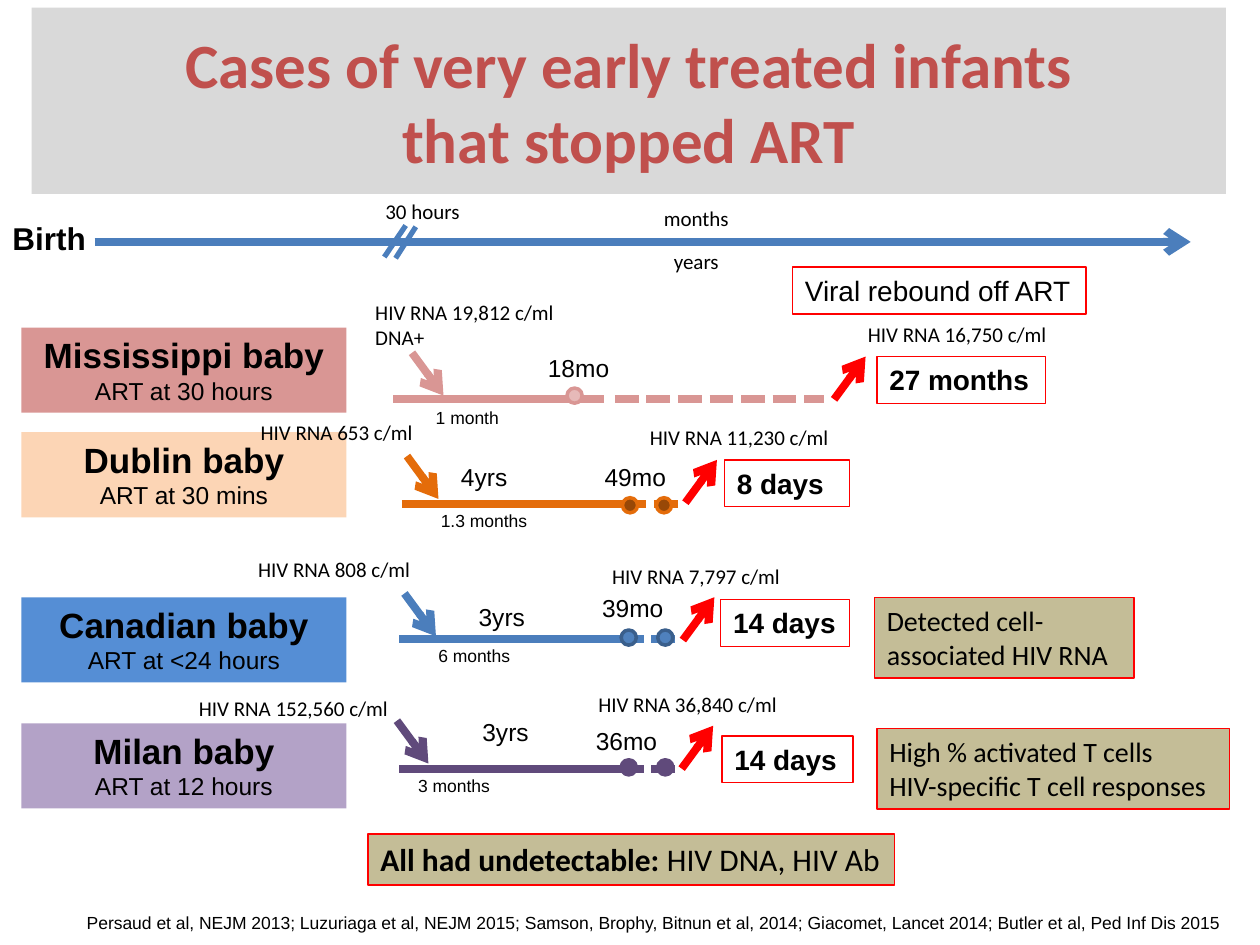
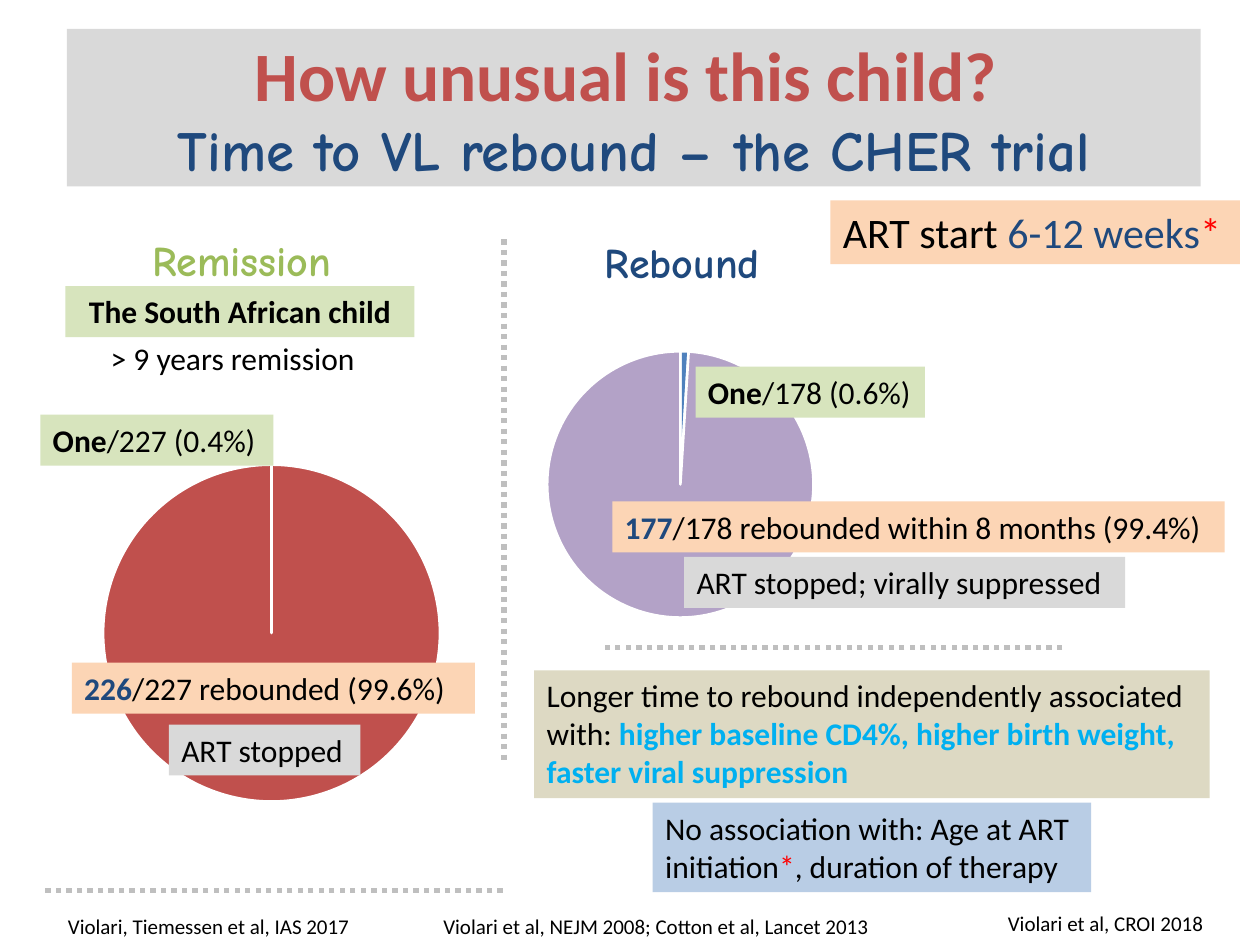
"""Build two slides on HIV rebound in early treated infants."""
from dataclasses import dataclass

from lxml.etree import SubElement
from pptx import Presentation
from pptx.chart.data import CategoryChartData
from pptx.dml.color import RGBColor
from pptx.enum.chart import XL_CHART_TYPE as ChartType
from pptx.enum.dml import MSO_LINE as Dash
from pptx.enum.shapes import MSO_CONNECTOR as Connector, MSO_SHAPE as Shape
from pptx.enum.text import MSO_ANCHOR as Anchor, MSO_AUTO_SIZE as AutoSize, PP_ALIGN as Align
from pptx.oxml.ns import qn
from pptx.util import Inches, Pt


@dataclass(frozen=True)
class Theme:
    """Colours, fonts and type sizes of both slides."""
    black: str = "000000"
    white: str = "FFFFFF"
    red: str = "FF0000"
    brick: str = "C0504D"
    grey: str = "D9D9D9"
    dots: str = "BFBFBF"
    navy: str = "1F497D"
    blue: str = "4B7EBC"
    sliver: str = "4F81BD"
    rim: str = "3A5F8C"
    sky: str = "558ED5"
    pale_blue: str = "B9CDE5"
    cyan: str = "00B0F0"
    rose: str = "D99694"
    pale_rose: str = "E6B9B8"
    peach: str = "FCD5B5"
    orange: str = "E46C0A"
    brown: str = "984807"
    lilac: str = "B3A2C7"
    purple: str = "604A7B"
    tan: str = "C4BD97"
    pale_tan: str = "DDD9C3"
    green: str = "9BBB59"
    pale_green: str = "D7E4BD"
    sans: str = "Arial"
    body: str = "Calibri"
    comic: str = "Comic Neue"
    tiny: float = 10
    small: float = 12
    label: float = 14
    medium: float = 16
    large: float = 18
    name: float = 20
    heading: float = 24
    title: float = 36
    question: float = 39.6
    subtitle: float = 32.4


T = Theme()
BOLD = {"bold": True}
NAVY_BOLD = {"bold": True, "color": T.navy}
STAR = ("*", {"color": T.red})

CASES_TITLE = [("Cases of very early treated infants\nthat stopped ART", {})]
CASES = [
    dict(name="Mississippi baby", art="ART at 30 hours", top=2.6, box=T.rose,
         line=T.rose, dot=T.pale_rose, rim=T.rose, y=3.17, solid=(3.12, 4.79), dashed=(4.88, 6.54),
         dots=[4.5], dot_top=3.08, start=(3.27, 2.8), rebound=(6.62, 3.17),
         rna=[("HIV RNA 19,812 c/ml\nDNA+", 2.88, 2.33, 1.67), ("HIV RNA 16,750 c/ml", 6.79, 2.5, 1.67)],
         ages=[("18mo", 4.25, 2.75, 0.8)], suppressed=("1 month", 3.36, 3.18, 0.75),
         result=("27 months", 6.96, 2.83, 1.34)),
    dict(name="Dublin baby", art="ART at 30 mins", top=3.43, box=T.peach,
         line=T.orange, dot=T.brown, rim=T.orange, y=4, solid=(3.19, 5.09), dashed=(4.94, 5.44),
         dots=[4.94, 5.21], dot_top=3.95, start=(3.23, 3.62), rebound=(5.44, 3.99),
         rna=[("HIV RNA 653 c/ml", 1.97, 3.28, 1.5), ("HIV RNA 11,230 c/ml", 5.06, 3.32, 1.67)],
         ages=[("4yrs", 3.56, 3.62, 0.95), ("49mo", 4.7, 3.62, 0.72)],
         suppressed=("1.3 months", 3.4, 4, 0.92), result=("8 days", 5.75, 3.65, 0.99)),
    dict(name="Canadian baby", art="ART at <24 hours", top=4.74, box=T.sky,
         line=T.blue, dot=T.sliver, rim=T.rim, y=5.07, solid=(3.17, 5.07), dashed=(4.92, 5.42),
         dots=[4.93, 5.22], dot_top=5, start=(3.21, 4.71), rebound=(5.42, 5.08),
         rna=[("HIV RNA 808 c/ml", 1.95, 4.37, 1.5), ("HIV RNA 7,797 c/ml", 4.76, 4.42, 1.67)],
         ages=[("3yrs", 3.7, 4.73, 0.95), ("39mo", 4.68, 4.66, 0.74)],
         suppressed=("6 months", 3.38, 5.07, 0.92), result=("14 days", 5.72, 4.76, 1.02)),
    dict(name="Milan baby", art="ART at 12 hours", top=5.74, box=T.lilac,
         line=T.purple, dot=T.purple, rim=T.purple, y=6.1, solid=(3.17, 5.07), dashed=(4.92, 5.42),
         dots=[4.93, 5.22], dot_top=6.03, start=(3.15, 5.72), rebound=(5.41, 6.1),
         rna=[("HIV RNA 152,560 c/ml", 1.48, 5.47, 1.83), ("HIV RNA 36,840 c/ml", 4.65, 5.44, 1.67)],
         ages=[("3yrs", 3.73, 5.64, 0.95), ("36mo", 4.63, 5.71, 0.72)],
         suppressed=("3 months", 3.22, 6.1, 0.92), result=("14 days", 5.73, 5.84, 1.04)),
]
AXIS_LABELS = [("30 hours", 2.96, 1.53, 0.95), ("months", 5.17, 1.58, 0.83), ("years", 5.25, 1.92, 0.83)]
AXIS_BREAK = [((3.05, 2.04), (3.22, 1.79)), ((3.14, 2.05), (3.3, 1.8))]
FINDINGS = [
    ([[("Detected cell-associated HIV RNA", {})]], 6.94, 4.74, 2.06, T.medium),
    ([[("High % activated T cells", {})], [("HIV-specific T cell responses", {})]], 6.96, 5.78, 2.8, T.medium),
    ([[("All had undetectable: ", BOLD), ("HIV DNA, HIV Ab", {})]], 2.92, 6.62, 4.18, T.large),
]
SOURCES = ("Persaud et al, NEJM 2013; Luzuriaga et al, NEJM 2015; Samson, Brophy, Bitnun et al, 2014; "
           "Giacomet, Lancet 2014; Butler et al, Ped Inf Dis 2015")

CHER_TITLE = [("How unusual is this child? \n", {}),
              ("Time to VL rebound – the CHER trial",
               {"size": T.subtitle, "font": T.comic, "color": T.navy})]
HEADINGS = [("Remission", 1.11, 1.81, 1.85, T.green), ("Rebound", 4.7, 1.83, 1.67, T.navy)]
ART_START = [("ART start ", {}), ("6-12 weeks", {"color": T.navy}), STAR]
ASSOCIATIONS = [
    ([("Longer time to rebound independently associated with: ", {}),
      ("higher baseline CD4%, higher birth weight, faster viral suppression", {"bold": True, "color": T.cyan})],
     4.24, 5.32, 5.36, T.pale_tan, 3),
    ([("No association with: Age at ART initiation", {}), STAR, (", duration of therapy", {})],
     5.18, 6.37, 3.48, T.pale_blue, 2),
]
PIES = [((0, 100), T.brick, (-0.06, 3.55, 4.43, 2.95)), ((1, 99), T.lilac, (3.61, 2.65, 3.58, 2.39))]
PIE_LABELS = [
    ([("226", NAVY_BOLD), ("/227 rebounded (99.6%)", {})], 0.57, 5.26, 3.2, T.peach),
    ([("177", NAVY_BOLD), ("/178 rebounded within 8 months (99.4%)", {})], 4.86, 3.98, 4.86, T.peach),
    ([("ART stopped", {})], 1.34, 5.75, 1.52, T.grey),
    ([("ART stopped; virally suppressed", {})], 5.43, 4.42, 3.5, T.grey),
    ([("One", BOLD), ("/227 (0.4%)", {})], 0.32, 3.29, 1.85, T.pale_green),
    ([("One", BOLD), ("/178 (0.6%)", {})], 5.52, 2.91, 1.82, T.pale_green),
]
DIVIDERS = [((4, 1.9), (4, 6.04)), ((3.99, 7.07), (0.36, 7.07)), ((8.43, 5.14), (4.77, 5.14))]
CITATIONS = [("Violari, Tiemessen et al, IAS 2017", 0.44, 7.2, 2.52),
             ("Violari et al, NEJM 2008; Cotton et al, Lancet 2013", 3.42, 7.2, 3.66),
             ("Violari et al, CROI 2018", 7.9, 7.18, 1.82)]


def paint(fill, color):
    fill.solid()
    fill.fore_color.rgb = RGBColor.from_string(color)


def set_font(font, size=None, font_name=None, color=None, bold=None):
    if size:
        font.size = Pt(size)
    if font_name:
        font.name = font_name
    if color:
        paint(font.fill, color)
    if bold is not None:
        font.bold = bold


def style(font, values):
    set_font(font, values.get("size"), values.get("font"), values.get("color"), values.get("bold"))


def write(frame, paragraphs, base, align):
    """Fill a frame; styles of a lone run go to its paragraph."""
    for index, runs in enumerate(paragraphs):
        paragraph = frame.paragraphs[0] if index == 0 else frame.add_paragraph()
        paragraph.alignment = align
        alone = len(runs) == 1
        style(paragraph.font, {**base, **runs[0][1]} if alone else base)
        for text, own in runs:
            for number, piece in enumerate(text.split("\n")):
                if number:
                    paragraph.add_line_break()
                if piece:
                    run = paragraph.add_run()
                    run.text = piece
                    if not alone:
                        style(run.font, own)


def add_text(slide, content, left, top, width, size, font=T.body, color=T.black, bold=False,
             fill=None, border=None, align=Align.LEFT, lines=None):
    """Place text in a box whose height follows from its lines."""
    paragraphs = [[(line, {})] for line in content.split("\n")] if isinstance(content, str) else content
    sizes = [runs[0][1].get("size", size) for runs in paragraphs]
    height = (lines * size if lines else sum(sizes)) * 1.22 / 72 + 0.1
    box = slide.shapes.add_textbox(Inches(left), Inches(top), Inches(width), Inches(height))
    box.text_frame.word_wrap = True
    if fill:
        paint(box.fill, fill)
    if border:
        paint(box.line.fill, border)
        box.line.width = Pt(0.75)
    write(box.text_frame, paragraphs, dict(size=size, font=font, color=color, bold=bold), align)


def add_line(slide, start, end, color, width=4.5, dash=None, arrow=False):
    line = slide.shapes.add_connector(Connector.STRAIGHT, *map(Inches, (*start, *end)))
    paint(line.line.fill, color)
    line.line.width = Pt(width)
    if dash:
        line.line.dash_style = dash
    if arrow:
        SubElement(line.get_or_add_ln(), qn("a:tailEnd"), type="arrow")
    SubElement(line._element.spPr, qn("a:effectLst"))


def add_titled_slide(deck, runs, place, size):
    slide = deck.slides.add_slide(deck.slide_layouts[5])
    title = slide.shapes.title
    title.left, title.top, title.width, title.height = map(Inches, place)
    paint(title.fill, T.grey)
    title.text_frame.vertical_anchor = Anchor.MIDDLE
    title.text_frame.auto_size = AutoSize.NONE
    write(title.text_frame, [runs], dict(size=size, font=T.body, color=T.brick, bold=True), Align.CENTER)
    return slide


def add_case(slide, case):
    """Draw one baby's box, treatment line, rebound and labels."""
    y, color = case["y"], case["line"]
    add_text(slide, [[(case["name"], BOLD)], [(case["art"], {"size": T.label})]], 0.17, case["top"], 2.58,
             T.name, T.sans, fill=case["box"], align=Align.CENTER)
    for (left, right), dash in ((case["solid"], None), (case["dashed"], Dash.SQUARE_DOT)):
        add_line(slide, (left, y), (right, y), color, dash=dash)
    for left in case["dots"]:
        dot = slide.shapes.add_shape(Shape.FLOWCHART_CONNECTOR, Inches(left), Inches(case["dot_top"]),
                                     Inches(0.12), Inches(0.12))
        dot.shadow.inherit = False
        paint(dot.fill, case["dot"])
        paint(dot.line.fill, case["rim"])
        dot.line.width = Pt(2)
    for (x, top), rise, arrow_color in ((case["start"], 0.34, color), (case["rebound"], -0.34, T.red)):
        add_line(slide, (x, top), (x + 0.25, top + rise), arrow_color, arrow=True)
    for rna in case["rna"]:
        add_text(slide, *rna, T.small)
    for age in case["ages"]:
        add_text(slide, *age, T.label, T.sans)
    add_text(slide, *case["suppressed"], T.tiny, T.sans)
    add_text(slide, *case["result"], T.medium, T.sans, bold=True, border=T.red)


def add_pie(slide, values, color, place):
    data = CategoryChartData()
    data.categories = ["1", "2"]
    data.add_series("Series 1", values)
    chart = slide.shapes.add_chart(ChartType.PIE, *map(Inches, place), data).chart
    chart.has_legend = chart.has_title = False
    set_font(chart.font, T.tiny, T.body, T.black)
    plot = chart.plots[0]
    plot.vary_by_categories = True
    for index, slice_color in enumerate((T.sliver, color)):
        slice_format = plot.series[0].points[index].format
        paint(slice_format.fill, slice_color)
        paint(slice_format.line.fill, T.white)
        slice_format.line.width = Pt(1.5)


def build_cases(deck):
    slide = add_titled_slide(deck, CASES_TITLE, (0.25, 0.06, 9.48, 1.48), T.title)
    add_line(slide, (0.75, 1.92), (9.45, 1.92), T.blue, arrow=True)
    add_text(slide, "Birth", 0, 1.69, 2.33, T.large, T.sans, bold=True)
    for start, end in AXIS_BREAK:
        add_line(slide, start, end, T.blue, 3)
    for label in AXIS_LABELS:
        add_text(slide, *label, T.small)
    for case in reversed(CASES):
        add_case(slide, case)
    for index, finding in enumerate(FINDINGS):
        add_text(slide, *finding, fill=T.tan, border=T.red, lines=2 if index == 0 else None)
    add_text(slide, "Viral rebound off ART", 6.29, 2.12, 2.33, T.medium, T.sans, border=T.red)
    add_text(slide, SOURCES, 0.59, 7.19, 9.24, T.tiny, T.sans)


def build_cher(deck):
    slide = add_titled_slide(deck, CHER_TITLE, (0.53, 0.23, 9, 1.25), T.question)
    for text, left, top, width, color in HEADINGS:
        add_text(slide, text, left, top, width, T.heading, T.comic, color, True)
    add_text(slide, "The South African child", 0.52, 2.27, 2.77, T.large, bold=True,
             fill=T.pale_green, align=Align.CENTER)
    add_text(slide, [ART_START], 6.59, 1.59, 3.25, T.heading, fill=T.peach)
    add_text(slide, "> 9 years remission", 0.78, 2.64, 2.28, T.large)
    for citation in CITATIONS:
        add_text(slide, *citation, T.small)
    for runs, left, top, width, fill, lines in ASSOCIATIONS:
        add_text(slide, [runs], left, top, width, T.large, fill=fill, lines=lines)
    for start, end in DIVIDERS:
        add_line(slide, start, end, T.dots, 3, Dash.ROUND_DOT)
    for pie in PIES:
        add_pie(slide, *pie)
    for runs, left, top, width, fill in PIE_LABELS:
        add_text(slide, [runs], left, top, width, T.large, fill=fill)


def main():
    deck = Presentation()
    deck.slide_width, deck.slide_height = Inches(10), Inches(7.5)
    build_cases(deck)
    build_cher(deck)
    deck.save("out.pptx")


if __name__ == "__main__":
    main()
